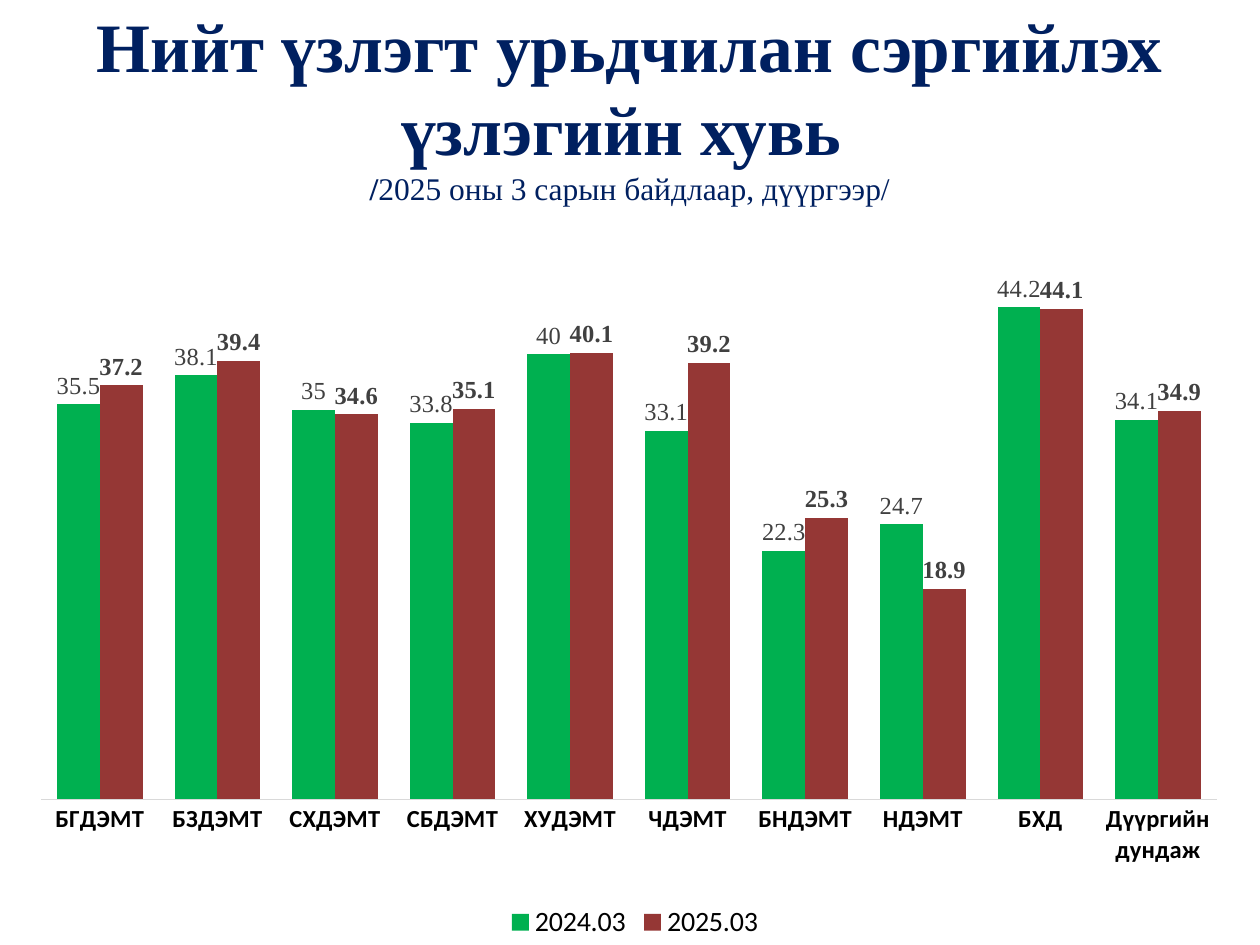
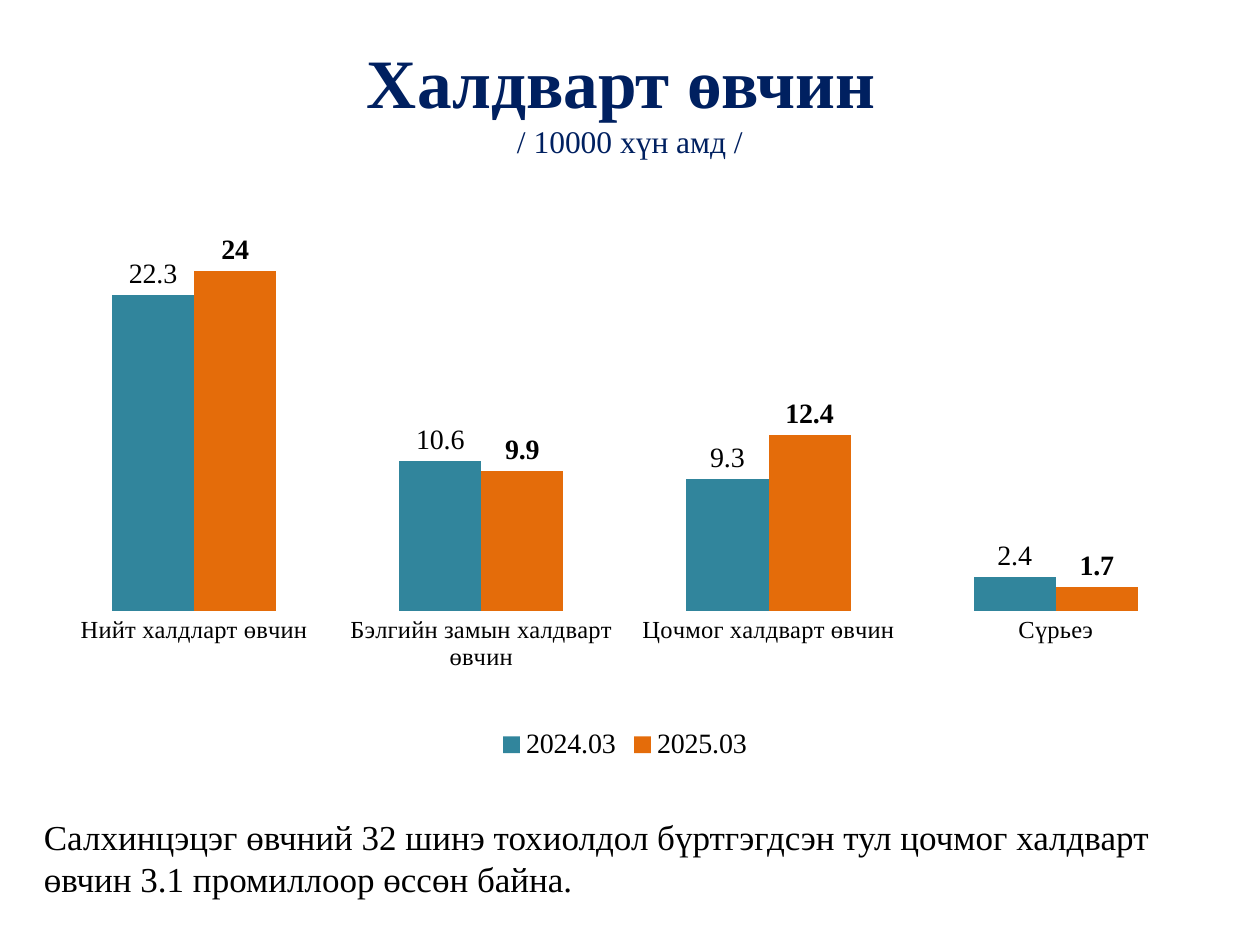
from copy import deepcopy

from lxml.etree import SubElement
from pptx import Presentation
from pptx.chart.data import CategoryChartData
from pptx.dml.color import RGBColor
from pptx.enum.chart import XL_CHART_TYPE, XL_LABEL_POSITION, XL_LEGEND_POSITION, XL_TICK_MARK
from pptx.enum.text import MSO_ANCHOR, MSO_AUTO_SIZE, PP_ALIGN
from pptx.oxml.ns import qn
from pptx.util import Inches, Pt

COLORS = {
    "title": "002060", "text": "000000", "label": "404040", "axis": "D9D9D9",
    "green": "00B050", "maroon": "953735", "teal": "31859C", "orange": "E46C0A",
}
SERIF, SANS = "Times New Roman", "Calibri"
TITLE_SIZE, SUBTITLE_SIZE = 39.6, 18
YEARS = ["2024.03", "2025.03"]

CHART_SLIDES = [
    {
        "title": "Нийт үзлэгт урьдчилан сэргийлэх үзлэгийн хувь ",
        "subtitle": [("/", True), ("2025 оны 3 сарын байдлаар, дүүргээр/", False)],
        "title_box": (0.5, 0.5, 9, 0.67),
        "chart_box": (0.25, 1.75, 9.58, 5.75),
        "plot": {"x": 0.008, "y": 0.031, "w": 0.974, "h": 0.768},
        "categories": ["БГДЭМТ", "БЗДЭМТ", "СХДЭМТ", "СБДЭМТ", "ХУДЭМТ", "ЧДЭМТ",
                       "БНДЭМТ", "НДЭМТ", "БХД", "Дүүргийн дундаж"],
        "values": [
            [35.5, 38.1, 35, 33.8, 40, 33.1, 22.3, 24.7, 44.2, 34.1],
            [37.2, 39.4, 34.6, 35.1, 40.1, 39.2, 25.3, 18.9, 44.1, 34.9],
        ],
        "fills": ["green", "maroon"],
        "maximum": 50, "gap": 75, "axis_line": True,
        "font": SANS, "bold_categories": True,
        "label_size": 14, "label_color": "label",
    },
    {
        "title": "Халдварт өвчин ",
        "subtitle": [("/ 10000 хүн амд /", False)],
        "title_box": (0.5, 0.25, 9, 1.08),
        "chart_box": (0.25, 1.33, 9.42, 4.75),
        "plot": {"x": 0.016, "y": 0.03, "w": 0.968, "h": 0.711},
        "categories": ["Нийт халдларт өвчин", "Бэлгийн замын халдварт өвчин",
                       "Цочмог халдварт өвчин", "Сүрьеэ"],
        "values": [[22.3, 10.6, 9.3, 2.4], [24, 9.9, 12.4, 1.7]],
        "fills": ["teal", "orange"],
        "maximum": 30, "gap": 150, "axis_line": False,
        "font": SERIF, "bold_categories": False,
        "label_size": 16, "label_color": "text",
    },
]
NOTE = ("Салхинцэцэг өвчний 32 шинэ тохиолдол бүртгэгдсэн тул цочмог халдварт "
        "өвчин 3.1 промиллоор өссөн байна.")


def set_font(font, name, size, color, bold=False):
    font.name = name
    font.size = Pt(size)
    font.bold = bold
    font.color.rgb = RGBColor.from_string(COLORS[color])


def set_plot_layout(chart, fractions):
    """Fix the inner plot area as fractions of the chart's width and height."""
    plot_area = chart._chartSpace.chart.plotArea
    for old_layout in plot_area.findall(qn("c:layout")):
        plot_area.remove(old_layout)
    layout = SubElement(plot_area, qn("c:layout"))
    plot_area.insert(0, layout)
    manual = SubElement(layout, qn("c:manualLayout"))
    settings = {"layoutTarget": "inner", "xMode": "edge", "yMode": "edge", **fractions}
    for tag, value in settings.items():
        SubElement(manual, qn(f"c:{tag}")).set("val", str(value))


presentation = Presentation()
presentation.slide_width = Inches(10)
presentation.slide_height = Inches(7.5)

for content in CHART_SLIDES:
    slide = presentation.slides.add_slide(presentation.slide_layouts[5])

    # Title with a smaller second line
    title = slide.shapes.title
    title.left, title.top, title.width, title.height = map(Inches, content["title_box"])
    frame = title.text_frame
    frame.word_wrap = True
    frame.auto_size = MSO_AUTO_SIZE.NONE
    frame.vertical_anchor = MSO_ANCHOR.MIDDLE
    paragraph = frame.paragraphs[0]
    paragraph.alignment = PP_ALIGN.CENTER
    run = paragraph.add_run()
    run.text = content["title"]
    set_font(run.font, SERIF, TITLE_SIZE, "title", bold=True)
    paragraph.add_line_break()
    paragraph._p[-1].append(deepcopy(run._r.rPr))  # the break keeps the title size
    for text, bold in content["subtitle"]:
        run = paragraph.add_run()
        run.text = text
        set_font(run.font, SERIF, SUBTITLE_SIZE, "title", bold)

    # Clustered columns comparing the two years
    chart_data = CategoryChartData()
    chart_data.categories = content["categories"]
    for year, values in zip(YEARS, content["values"]):
        chart_data.add_series(year, values)
    chart = slide.shapes.add_chart(
        XL_CHART_TYPE.COLUMN_CLUSTERED, *map(Inches, content["chart_box"]), chart_data
    ).chart
    chart.has_title = False
    set_font(chart.font, content["font"], 14, "text")
    set_plot_layout(chart, content["plot"])

    value_axis = chart.value_axis
    value_axis.visible = False
    value_axis.has_major_gridlines = False
    value_axis.minimum_scale = 0
    value_axis.maximum_scale = content["maximum"]

    category_axis = chart.category_axis
    category_axis.major_tick_mark = XL_TICK_MARK.NONE
    set_font(category_axis.tick_labels.font, content["font"], 14, "text",
             content["bold_categories"])
    axis_line = category_axis.format.line
    if content["axis_line"]:
        axis_line.color.rgb = RGBColor.from_string(COLORS["axis"])
        axis_line.width = Pt(0.75)
    else:
        axis_line.fill.background()

    chart.has_legend = True
    chart.legend.position = XL_LEGEND_POSITION.BOTTOM
    chart.legend.include_in_layout = False
    set_font(chart.legend.font, content["font"], 16, "text")

    plot = chart.plots[0]
    plot.gap_width = content["gap"]
    plot.overlap = 0
    plot.vary_by_categories = False
    for series, fill in zip(plot.series, content["fills"]):
        series.format.fill.solid()
        series.format.fill.fore_color.rgb = RGBColor.from_string(COLORS[fill])
        labels = series.data_labels
        labels.show_value = True
        labels.position = XL_LABEL_POSITION.OUTSIDE_END
        set_font(labels.font, SERIF, content["label_size"], content["label_color"],
                 bold=series.name == YEARS[-1])

# Closing remark under the last chart
note = slide.shapes.add_textbox(Inches(0.25), Inches(6.42), Inches(9.5), Inches(0.77))
note.text_frame.word_wrap = True
note.text_frame.auto_size = MSO_AUTO_SIZE.SHAPE_TO_FIT_TEXT
run = note.text_frame.paragraphs[0].add_run()
run.text = NOTE
set_font(run.font, SERIF, 20, "text")

presentation.save("out.pptx")
